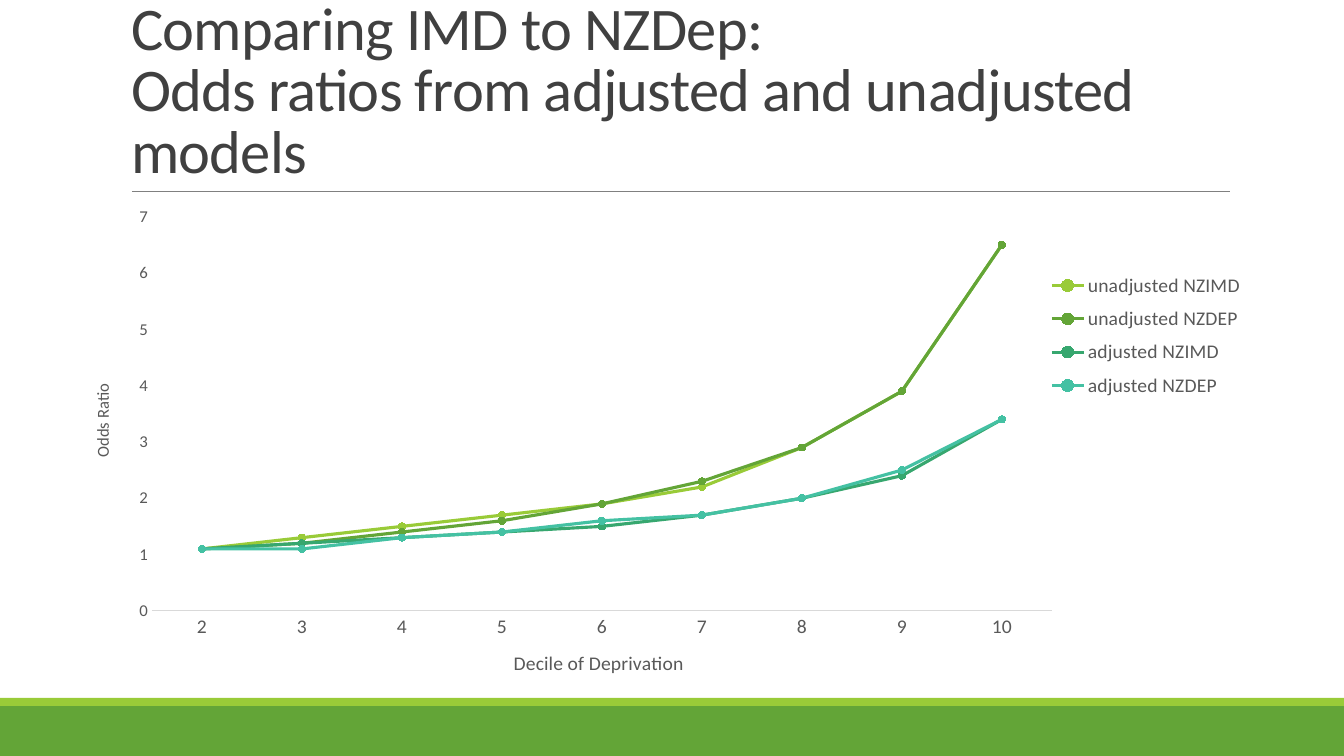
from lxml import etree
from pptx import Presentation
from pptx.chart.data import CategoryChartData
from pptx.dml.color import RGBColor
from pptx.enum.chart import XL_CHART_TYPE, XL_LEGEND_POSITION, XL_MARKER_STYLE, XL_TICK_MARK
from pptx.enum.shapes import MSO_CONNECTOR, MSO_SHAPE
from pptx.enum.text import MSO_ANCHOR, MSO_AUTO_SIZE, PP_ALIGN
from pptx.oxml import parse_xml
from pptx.oxml.ns import nsdecls, qn
from pptx.util import Pt

LINE_MARKERS = XL_CHART_TYPE.LINE_MARKERS
LEGEND_BOTTOM = XL_LEGEND_POSITION.BOTTOM
CIRCLE = XL_MARKER_STYLE.CIRCLE
NO_TICK = XL_TICK_MARK.NONE

LIME = RGBColor(0x99, 0xCB, 0x38)
GREEN = RGBColor(0x63, 0xA5, 0x37)
EMERALD = RGBColor(0x37, 0xA7, 0x6F)
TEAL = RGBColor(0x44, 0xC1, 0xA3)
TITLE_GREY = RGBColor(0x40, 0x40, 0x40)
LABEL_GREY = RGBColor(0x59, 0x59, 0x59)
RULE_GREY = RGBColor(0x80, 0x80, 0x80)
AXIS_GREY = RGBColor(0xD9, 0xD9, 0xD9)
FONT = "Calibri"

TITLE_LINES = ["Comparing IMD to NZDep:",
               "Odds ratios from adjusted and unadjusted models"]
DECILES = [str(decile) for decile in range(2, 11)]
ODDS_RATIOS = [
    ("unadjusted NZIMD", LIME, (1.1, 1.3, 1.5, 1.7, 1.9, 2.2, 2.9, 3.9, 6.5)),
    ("unadjusted NZDEP", GREEN, (1.1, 1.2, 1.4, 1.6, 1.9, 2.3, 2.9, 3.9, 6.5)),
    ("adjusted NZIMD", EMERALD, (1.1, 1.2, 1.3, 1.4, 1.5, 1.7, 2.0, 2.4, 3.4)),
    ("adjusted NZDEP", TEAL, (1.1, 1.1, 1.3, 1.4, 1.6, 1.7, 2.0, 2.5, 3.4)),
]

# Boxes in px: left, top, width, height
SLIDE_SIZE = (1344, 756)
BANDS = [((0, 706, 1344, 50), GREEN), ((0, 698, 1344, 8), LIME)]
TITLE_BOX = (121, 31, 1109, 160)
TITLE_RULE = (132, 191, 1230, 191)
CHART_BOX = (81, 202, 1171, 480)
PLOT_BOX = (152, 217, 900, 400)
LEGEND_BOX = (1046, 265, 200, 145)
DECILE_TITLE_AT = (510, 653)
RATIO_TITLE_AT = (88, 384)


def px(*lengths):
    return [round(length * 914400 / 100.8) for length in lengths]


def style_font(font, size, color):
    font.name, font.size, font.bold = FONT, Pt(size), False
    font.color.rgb = color


def make_layout(box, inner=False):
    """Manual chart layout for a slide box given in px; size is optional."""
    layout = parse_xml(f"<c:layout {nsdecls('c')}><c:manualLayout/></c:layout>")
    origin, extent = CHART_BOX[:2], CHART_BOX[2:]
    shares = [(place - start) / size for place, start, size in zip(box, origin, extent)]
    shares += [length / size for length, size in zip(box[2:], extent)]
    settings = [("layoutTarget", "inner")] if inner else []
    settings += [("xMode", "edge"), ("yMode", "edge")]
    settings += [(key, f"{share:.4f}") for key, share in zip("xywh", shares)]
    for key, value in settings:
        etree.SubElement(layout[0], qn(f"c:{key}")).set("val", value)
    return layout


def place(element, layout, before):
    """Replace an element's layout, keeping it ahead of the named children."""
    for old in element.findall(qn("c:layout")):
        element.remove(old)
    names = [qn(f"c:{name}") for name in before]
    follower = next(child for child in element if child.tag in names)
    follower.addprevious(layout)


def style_axis(axis, caption, caption_size, label_size, caption_at):
    axis.has_major_gridlines = False
    axis.major_tick_mark = axis.minor_tick_mark = NO_TICK
    style_font(axis.tick_labels.font, label_size, LABEL_GREY)
    run = axis.axis_title.text_frame.paragraphs[0].add_run()
    run.text = caption
    style_font(run.font, caption_size, LABEL_GREY)
    title = axis.axis_title._element
    place(title, make_layout(caption_at), ["overlay", "spPr", "txPr"])


def add_title(slide):
    title = slide.shapes.title
    title.left, title.top, title.width, title.height = px(*TITLE_BOX)
    frame = title.text_frame
    frame.auto_size, frame.word_wrap = MSO_AUTO_SIZE.NONE, True
    frame.vertical_anchor = MSO_ANCHOR.BOTTOM
    paragraph = frame.paragraphs[0]
    paragraph.alignment, paragraph.line_spacing = PP_ALIGN.LEFT, 0.85
    for index, line in enumerate(TITLE_LINES):
        if index:
            paragraph.add_line_break()
        run = paragraph.add_run()
        run.text = line
        style_font(run.font, 43.2, TITLE_GREY)
        run.font._element.set("spc", "-50")


def add_decoration(slide):
    for box, color in BANDS:
        band = slide.shapes.add_shape(MSO_SHAPE.RECTANGLE, *px(*box))
        band.shadow.inherit = False
        band.fill.solid()
        band.fill.fore_color.rgb = color
        band.line.fill.background()
    rule = slide.shapes.add_connector(MSO_CONNECTOR.STRAIGHT, *px(*TITLE_RULE))
    rule.line.color.rgb, rule.line.width = RULE_GREY, Pt(0.5)
    etree.SubElement(rule._element.spPr, qn("a:effectLst"))


def add_odds_chart(slide):
    data = CategoryChartData()
    data.categories = DECILES
    for name, _, ratios in ODDS_RATIOS:
        data.add_series(name, ratios)
    chart = slide.shapes.add_chart(LINE_MARKERS, *px(*CHART_BOX), data).chart
    chart.has_title = False
    style_font(chart.font, 10, LABEL_GREY)
    chart.plots[0].vary_by_categories = False
    for series, (_, color, _) in zip(chart.plots[0].series, ODDS_RATIOS):
        series.smooth = False
        series.format.line.color.rgb, series.format.line.width = color, Pt(2.25)
        series.marker.style, series.marker.size = CIRCLE, 5
        series.marker.format.fill.solid()
        series.marker.format.fill.fore_color.rgb = color
        series.marker.format.line.color.rgb = color

    deciles, ratios = chart.category_axis, chart.value_axis
    style_axis(deciles, "Decile of Deprivation", 14, 14, DECILE_TITLE_AT)
    style_axis(ratios, "Odds Ratio", 12, 12, RATIO_TITLE_AT)
    deciles.format.line.color.rgb, deciles.format.line.width = AXIS_GREY, Pt(0.75)
    ratios.format.line.fill.background()
    ratios.minimum_scale, ratios.maximum_scale, ratios.major_unit = 0, 7, 1
    ratios.tick_labels.number_format = "0"
    ratios.tick_labels.number_format_is_linked = False
    body = ratios.axis_title.text_frame._txBody.bodyPr
    body.set("rot", "-5400000")
    body.set("vert", "horz")

    chart.has_legend = True
    legend = chart.legend
    legend.position, legend.include_in_layout = LEGEND_BOTTOM, False
    style_font(legend.font, 14, LABEL_GREY)
    place(legend._element, make_layout(LEGEND_BOX), ["overlay", "spPr", "txPr"])
    plot_area = chart._chartSpace.chart.plotArea
    place(plot_area, make_layout(PLOT_BOX, inner=True), ["lineChart"])


def main():
    deck = Presentation()
    deck.slide_width, deck.slide_height = px(*SLIDE_SIZE)
    slide = deck.slides.add_slide(deck.slide_layouts[5])
    add_decoration(slide)
    add_title(slide)
    add_odds_chart(slide)
    deck.save("out.pptx")


if __name__ == "__main__":
    main()
